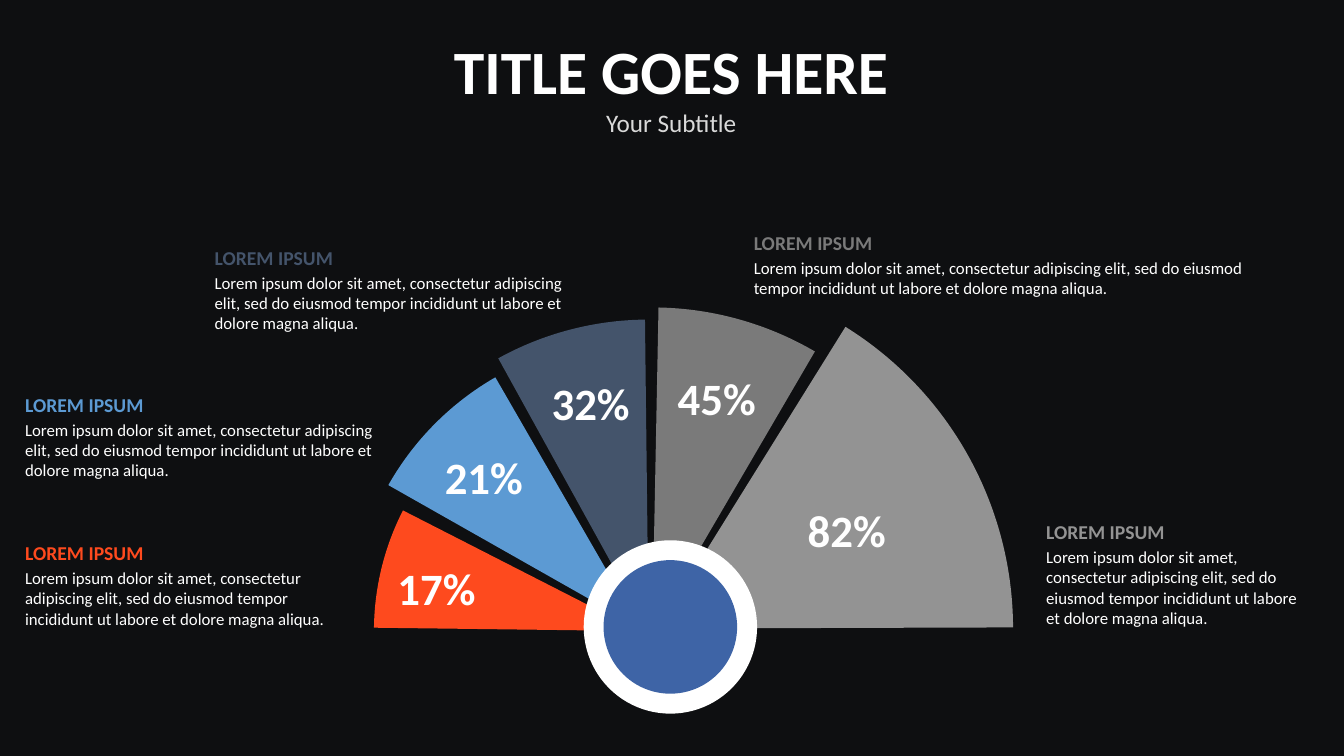
import pptx
import pptx.util
import pptx.dml.color
import pptx.enum.shapes
import pptx.enum.text

theme = {
    "font": "Calibri",
    "background": "0E0F11", "white": "FFFFFF", "subtitle": "D9D9D9", "hub": "3E64A6",
    "blue": "5C9AD3", "navy": "44546B", "gray": "7A7A7A", "silver": "939393", "orange": "FE4A1E",
    "title_size": 44, "subtitle_size": 18, "percent_size": 32, "heading_size": 14, "body_size": 12,
}
kinds = pptx.enum.shapes.MSO_SHAPE
aligns = pptx.enum.text.PP_ALIGN
rgb = pptx.dml.color.RGBColor.from_string

deck = pptx.Presentation()
deck.slide_width = pptx.util.Inches(13.333)
deck.slide_height = pptx.util.Inches(7.5)
column = deck.slide_width / 100
row = deck.slide_height / 100
slide = deck.slides.add_slide(deck.slide_layouts[6])
slide.background.fill.solid()
slide.background.fill.fore_color.rgb = rgb(theme["background"])


def add_round(kind, center_x, center_y, diameter, color):
    side = int(diameter * column)
    part = slide.shapes.add_shape(kind, int(center_x * column - side / 2),
                                  int(center_y * row - side / 2), side, side)
    part.shadow.inherit = False
    part.fill.solid()
    part.fill.fore_color.rgb = rgb(theme[color])
    part.line.fill.background()
    return part


def add_words(left, top, width, height, lines, align, frame_format):
    frame = slide.shapes.add_textbox(int(left * column), int(top * row),
                                     int(width * column), int(height * row)).text_frame
    for name, value in frame_format.items():
        setattr(frame, name, value)
    for index, (words, size, color, bold, gap) in enumerate(lines):
        paragraph = frame.add_paragraph() if index else frame.paragraphs[0]
        paragraph.alignment = align
        if gap:
            paragraph.space_before = pptx.util.Pt(gap)
        run = paragraph.add_run()
        run.text = words
        font_format = {"name": theme["font"], "size": pptx.util.Pt(theme[size]), "bold": bold}
        for name, value in font_format.items():
            setattr(run.font, name, value)
        run.font.color.rgb = rgb(theme[color])


wrapped = {"word_wrap": True, "auto_size": pptx.enum.text.MSO_AUTO_SIZE.SHAPE_TO_FIT_TEXT}
centered = {
    "word_wrap": False, "auto_size": pptx.enum.text.MSO_AUTO_SIZE.SHAPE_TO_FIT_TEXT,
    "vertical_anchor": pptx.enum.text.MSO_ANCHOR.MIDDLE,
    "margin_left": 0, "margin_top": 0, "margin_right": 0, "margin_bottom": 0,
}

fan_turn = 240
adjustment_per_degree = 0.6
wedges = [
    ("blue", 47.59, 83.0, 42.98, 329.54, 0.03),
    ("navy", 48.26, 83.4, 46.28, 1.1, 29.34),
    ("gray", 48.53, 83.33, 48.0, 31.12, 60.29),
    ("silver", 48.94, 83.13, 52.88, 61.9, 119.82),
    ("orange", 47.55, 83.47, 39.45, 300.73, 327.07),
]
for color, center_x, center_y, diameter, start, end in wedges:
    wedge = add_round(kinds.PIE, center_x, center_y, diameter, color)
    wedge.rotation = fan_turn
    for index, angle in enumerate((start, end)):
        wedge.adjustments[index] = angle * adjustment_per_degree

for color, diameter in (("white", 12.9), ("hub", 9.94)):
    add_round(kinds.OVAL, 49.88, 82.93, diameter, color)

percent_width, percent_height = 5.85, 7.2
percents = [
    ("17%", 32.48, 77.73),
    ("45%", 53.33, 52.53),
    ("21%", 36.0, 63.07),
    ("32%", 43.95, 53.2),
    ("82%", 63.0, 70.0),
]
for percent, center_x, center_y in percents:
    add_words(center_x - percent_width / 2, center_y - percent_height / 2,
              percent_width, percent_height,
              [(percent, "percent_size", "white", True, 0)], aligns.CENTER, centered)

add_words(27.38, 3.73, 45.15, 15.2, [
    ("TITLE GOES HERE", "title_size", "white", True, 0),
    ("Your Subtitle", "subtitle_size", "subtitle", False, 0),
], aligns.CENTER, wrapped)

description = ("Lorem ipsum dolor sit amet, consectetur adipiscing elit, sed do eiusmod "
               "tempor incididunt ut labore et dolore magna aliqua.")
notes = [
    ("orange", 1.13, 70.93, 25.88, 13.07),
    ("blue", 1.13, 51.33, 27.38, 13.07),
    ("navy", 15.23, 31.87, 28.5, 13.07),
    ("silver", 77.1, 68.13, 20.78, 15.73),
    ("gray", 55.35, 29.87, 38.48, 10.27),
]
for color, left, top, width, height in notes:
    add_words(left, top, width, height, [
        ("LOREM IPSUM", "heading_size", color, True, 0),
        (description, "body_size", "white", False, 2.4),
    ], aligns.LEFT, wrapped)

deck.save("out.pptx")
